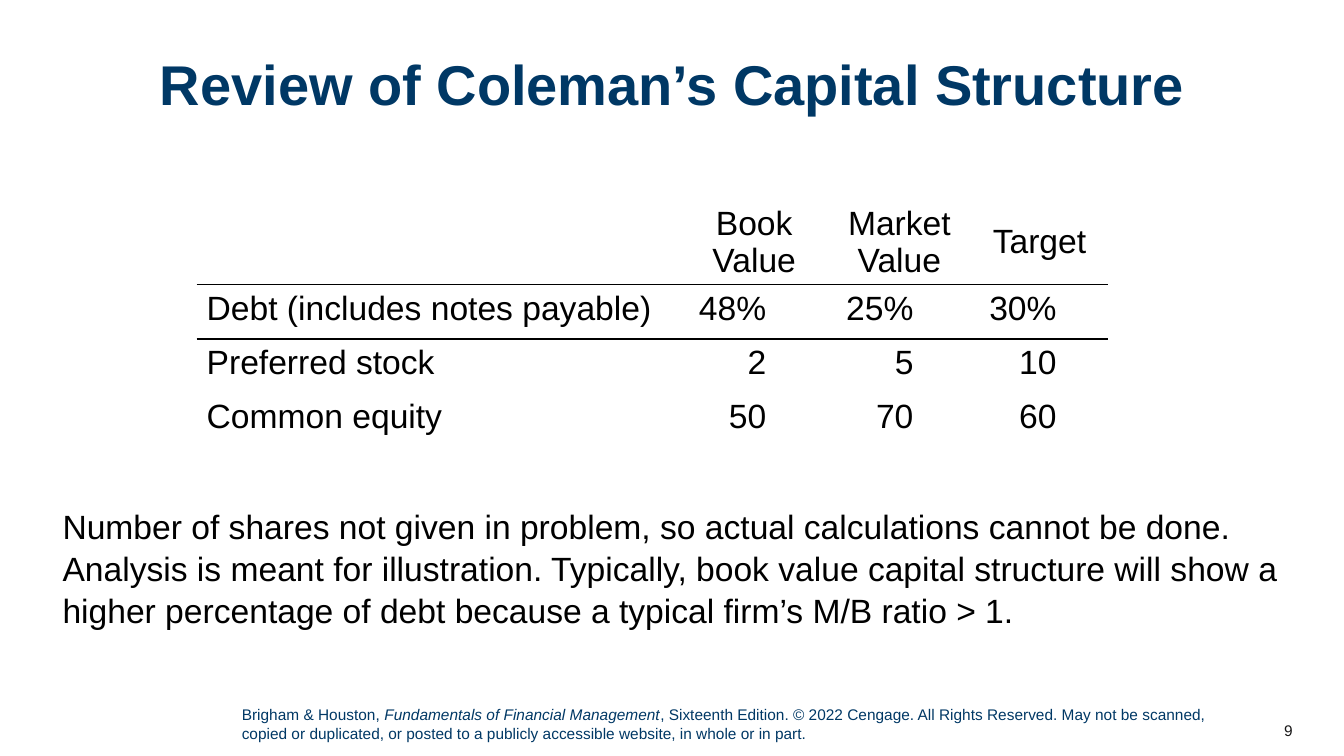
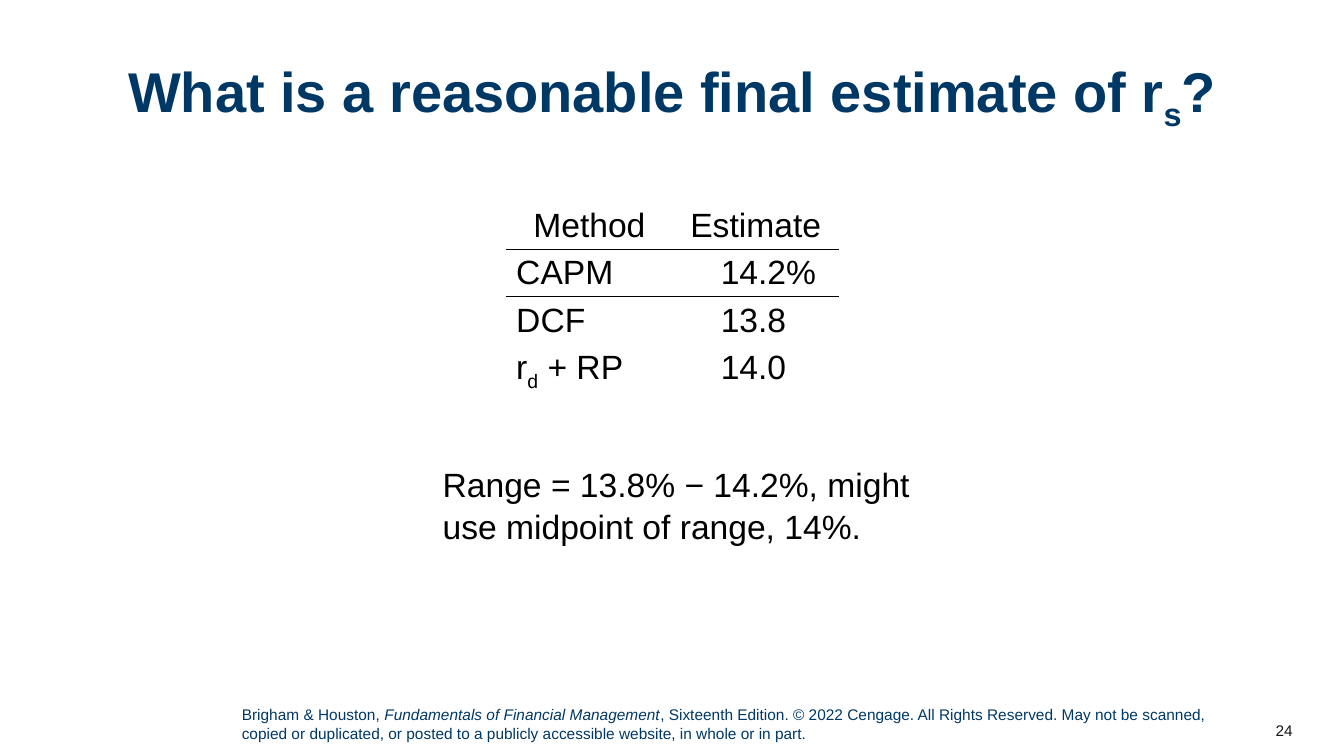
from lxml import etree
from pptx import Presentation
from pptx.dml.color import RGBColor
from pptx.enum.text import MSO_ANCHOR, MSO_AUTO_SIZE, PP_ALIGN
from pptx.oxml.ns import qn
from pptx.util import Inches, Pt

NAVY = RGBColor(0x00, 0x38, 0x65)
BLACK = RGBColor(0x00, 0x00, 0x00)
CHARCOAL = RGBColor(0x18, 0x17, 0x17)
FONT = "Arial"
LEFT, CENTER, RIGHT = PP_ALIGN.LEFT, PP_ALIGN.CENTER, PP_ALIGN.RIGHT
TOP, MIDDLE = MSO_ANCHOR.TOP, MSO_ANCHOR.MIDDLE
NO_AUTOFIT = MSO_AUTO_SIZE.NONE
PLAIN, ITALIC, SUBSCRIPT = "plain", "italic", "subscript"
NO_STYLE_NO_GRID = "{2D5ABB26-0587-4C30-8999-92F81FD0307C}"

FOOTER = [
    ("Brigham & Houston, ", PLAIN),
    ("Fundamentals of Financial Management", ITALIC),
    (", Sixteenth Edition. © 2022 Cengage. All Rights Reserved. May not be scanned, "
     "copied or duplicated, or posted to a publicly accessible website, "
     "in whole or in part.", PLAIN),
]

SLIDES = [
    {
        "number": "9",
        "title": [("Review of Coleman’s Capital Structure", PLAIN)],
        "table_at": (1.95, 1.98),
        "columns": [4.8, 1.46, 1.42, 1.36],
        "row_heights": [0.84, 0.54, 0.54, 0.54],
        "rows": [
            ["", "Book Value", "Market Value", "Target"],
            ["Debt (includes notes payable)", "48%", "25%", "30%"],
            ["Preferred stock", "2", "5", "10"],
            ["Common equity", "50", "70", "60"],
        ],
        "body_at": (0.52, 4.95, 12.29, 1.33),
        "body": "Number of shares not given in problem, so actual calculations cannot be "
                "done. Analysis is meant for illustration. Typically, book value capital "
                "structure will show a higher percentage of debt because a typical firm’s "
                "M/B ratio > 1.",
    },
    {
        "number": "24",
        "title": [("What is a reasonable final estimate of r", PLAIN),
                  ("s", SUBSCRIPT), ("?", PLAIN)],
        "table_at": (5.02, 2),
        "columns": [1.65, 1.65],
        "row_heights": [0.47] * 4,
        "rows": [
            ["Method", "Estimate"],
            ["CAPM", "14.2%"],
            ["DCF", "13.8"],
            [[("r", PLAIN), ("d", SUBSCRIPT), (" + RP", PLAIN)], "14.0"],
        ],
        "body_at": (4.29, 4.54, 5.04, 0.91),
        "body": "Range = 13.8% − 14.2%, might use midpoint of range, 14%.",
    },
]


def write(paragraph, content, size, color, align=LEFT, bold=False):
    paragraph.alignment = align
    pieces = [(content, PLAIN)] if isinstance(content, str) else content
    for text, style in pieces:
        run = paragraph.add_run()
        run.text = text
        font = run.font
        font.name, font.size, font.bold = FONT, Pt(size), bold
        font.italic = style == ITALIC
        font.color.rgb = color
        if style == SUBSCRIPT:
            run._r.get_or_add_rPr().set("baseline", "-25000")


def place(shape, left, top, width, height, anchor=TOP):
    shape.left, shape.top = Inches(left), Inches(top)
    shape.width, shape.height = Inches(width), Inches(height)
    frame = shape.text_frame
    frame.word_wrap = True
    frame.auto_size = NO_AUTOFIT
    frame.vertical_anchor = anchor
    return frame.paragraphs[0]


presentation = Presentation()
presentation.slide_width = Inches(13.33)
presentation.slide_height = Inches(7.5)

for content in SLIDES:
    slide = presentation.slides.add_slide(presentation.slide_layouts[1])

    title = place(slide.shapes.title, 0.52, 0.52, 12.29, 1.33)
    title.line_spacing = 0.9
    write(title, content["title"], 40, NAVY, CENTER, bold=True)

    body = place(slide.placeholders[1], *content["body_at"])
    body.line_spacing = 1.04
    body.space_before = Pt(0)
    properties = body._p.get_or_add_pPr()
    properties.set("marL", "0")
    properties.set("indent", "0")
    etree.SubElement(properties, qn("a:buNone"))
    write(body, content["body"], 24, BLACK)

    left, top = content["table_at"]
    columns, heights, rows = content["columns"], content["row_heights"], content["rows"]
    frame = slide.shapes.add_table(len(rows), len(columns), Inches(left), Inches(top),
                                   Inches(sum(columns)), Inches(sum(heights)))
    table = frame.table
    table.first_row = table.horz_banding = False
    table._tbl.tblPr.find(qn("a:tableStyleId")).text = NO_STYLE_NO_GRID
    for column, width in zip(table.columns, columns):
        column.width = Inches(width)
    for row_index, (row, height) in enumerate(zip(rows, heights)):
        table.rows[row_index].height = Inches(height)
        for column_index, value in enumerate(row):
            cell = table.cell(row_index, column_index)
            cell.fill.background()
            cell.vertical_anchor = MIDDLE if value == "Target" else TOP
            paragraph = cell.text_frame.paragraphs[0]
            if row_index and column_index:
                tabs = etree.SubElement(paragraph._p.get_or_add_pPr(), qn("a:tabLst"))
                etree.SubElement(tabs, qn("a:tab"), pos=str(Inches(0.75)), algn="dec")
                value = "\t" + value
            write(paragraph, value, 24, BLACK, LEFT if row_index else CENTER)
            if row_index < 2:
                border = etree.Element(qn("a:lnT" if row_index else "a:lnB"), w=str(Pt(1)))
                fill = etree.SubElement(border, qn("a:solidFill"))
                etree.SubElement(fill, qn("a:srgbClr"), val=str(BLACK))
                cell._tc.get_or_add_tcPr().insert(0, border)

    footer = place(slide.shapes.add_textbox(0, 0, 0, 0), 2.3, 6.95, 9.8, 0.47)
    write(footer, FOOTER, 11, NAVY)
    number = place(slide.shapes.add_textbox(0, 0, 0, 0), 12.12, 7.05, 0.8, 0.4, MIDDLE)
    write(number, content["number"], 11, CHARCOAL, RIGHT)

presentation.save("out.pptx")
